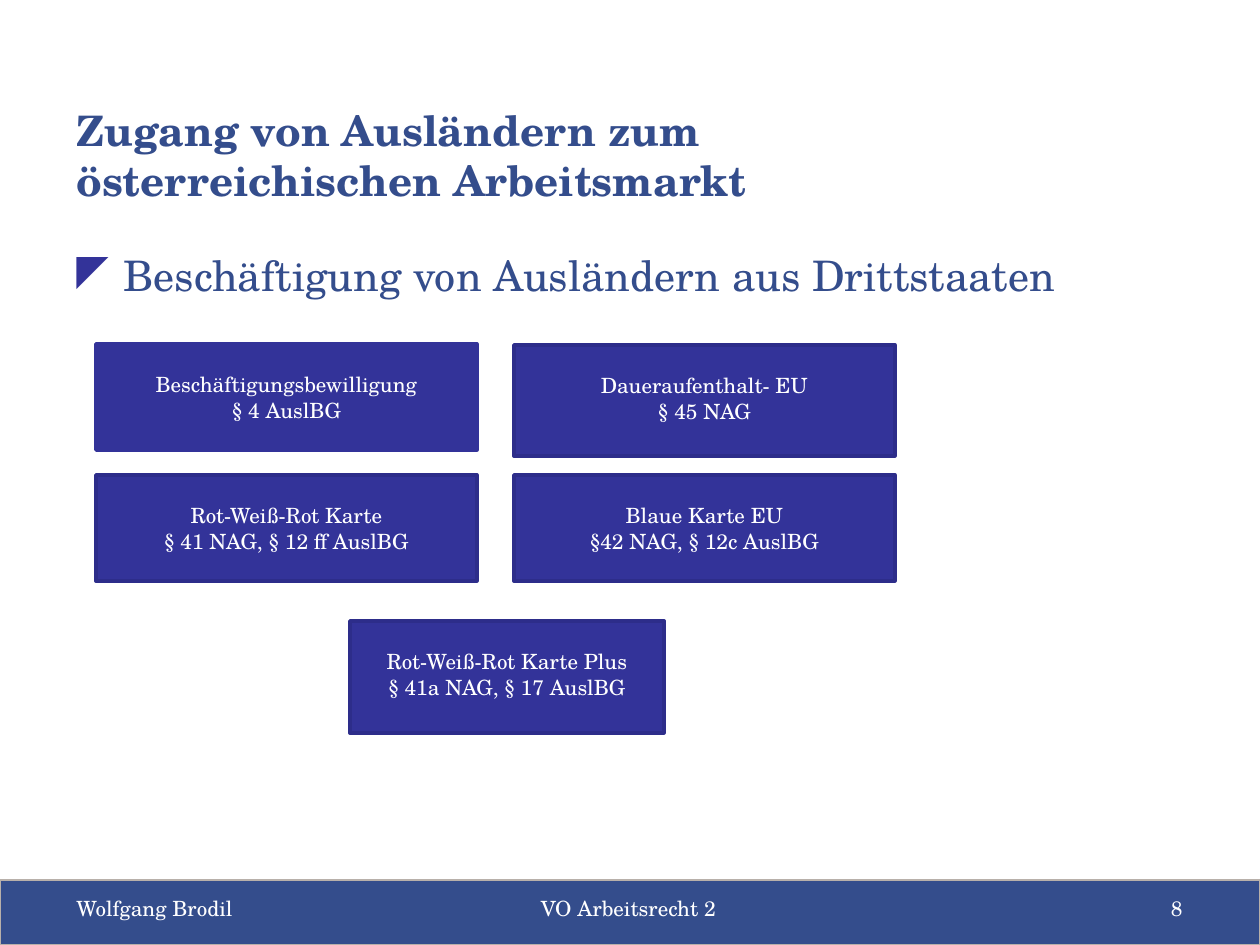
from dataclasses import dataclass

import pptx
import pptx.dml.color
import pptx.enum.shapes
import pptx.enum.text
import pptx.oxml
import pptx.oxml.ns
import pptx.util

EMU_PER_PX = 914400 / 126
FONT = "TeX Gyre Schola"
COLOURS = {
    "navy": "344D8C",
    "indigo": "333399",
    "indigo_edge": "2D2D8A",
    "grey": "B8B0AA",
    "white": "FFFFFF",
}
ALIGN = pptx.enum.text.PP_ALIGN
ANCHOR = pptx.enum.text.MSO_ANCHOR


@dataclass(frozen=True)
class Permit:
    left: int
    top: int
    width: int
    height: int
    name: str
    law: str
    edge: str = "indigo_edge"


LEFT_COLUMN, RIGHT_COLUMN, COLUMN_WIDTH = 96, 514, 381
PERMITS = [
    Permit(LEFT_COLUMN, 344, COLUMN_WIDTH, 106, "Beschäftigungsbewilligung", "§ 4 AuslBG", "indigo"),
    Permit(RIGHT_COLUMN, 345, COLUMN_WIDTH, 111, "Daueraufenthalt- EU", "§ 45 NAG"),
    Permit(LEFT_COLUMN, 475, COLUMN_WIDTH, 106, "Rot-Weiß-Rot Karte", "§ 41 NAG, § 12 ff AuslBG"),
    Permit(RIGHT_COLUMN, 475, COLUMN_WIDTH, 106, "Blaue Karte EU", "§42 NAG, § 12c AuslBG"),
    Permit(350, 621, 314, 112, "Rot-Weiß-Rot Karte Plus", "§ 41a NAG, § 17 AuslBG"),
]


def px(length: int) -> pptx.util.Emu:
    return pptx.util.Emu(round(length * EMU_PER_PX))


def colour(name: str) -> pptx.dml.color.RGBColor:
    return pptx.dml.color.RGBColor.from_string(COLOURS[name])


def add_properties(paragraph, *fragments: str) -> None:
    """Append bullet or tab elements to the paragraph properties."""
    properties = paragraph._p.get_or_add_pPr()
    namespace = pptx.oxml.ns.nsdecls("a")
    for fragment in fragments:
        element = fragment.replace(" ", f" {namespace} ", 1)
        properties.append(pptx.oxml.parse_xml(element))


def add_bullet(paragraph, character: str, fill: str, indent: int) -> None:
    properties = paragraph._p.get_or_add_pPr()
    properties.set("marL", str(px(indent)))
    properties.set("indent", str(-px(indent)))
    add_properties(
        paragraph,
        f'<a:buClr ><a:srgbClr val="{COLOURS[fill]}"/></a:buClr>',
        f'<a:buChar char="{character}"/>',
    )


def add_tabs(paragraph, stops: list[tuple[int, str]]) -> None:
    tabs = "".join(f'<a:tab pos="{px(position)}" algn="{align}"/>' for position, align in stops)
    add_properties(paragraph, f"<a:tabLst >{tabs}</a:tabLst>")


def write_text(shape, text: str, *, size: int, fill: str, bold: bool = False,
               align=ALIGN.LEFT, anchor=ANCHOR.TOP, inset_top: int = 6,
               bullet: str = "", tabs: list[tuple[int, str]] | None = None) -> None:
    """Write one paragraph per line of text."""
    frame = shape.text_frame
    frame.word_wrap = True
    frame.vertical_anchor = anchor
    frame.margin_top = px(inset_top)
    frame.text = text
    for paragraph in frame.paragraphs:
        paragraph.alignment = align
        if bullet:
            add_bullet(paragraph, bullet, "indigo", indent=47)
        if tabs:
            add_tabs(paragraph, tabs)
        for run in paragraph.runs:
            run.font.name = FONT
            run.font.size = pptx.util.Pt(size)
            run.font.bold = bold
            run.font.color.rgb = colour(fill)


def add_rectangle(slide, left: int, top: int, width: int, height: int, *,
                  fill: str, edge: str = "", edge_width: float = 0):
    shape = slide.shapes.add_shape(
        pptx.enum.shapes.MSO_SHAPE.RECTANGLE, px(left), px(top), px(width), px(height))
    shape.shadow.inherit = False
    shape.fill.solid()
    shape.fill.fore_color.rgb = colour(fill)
    if edge:
        shape.line.color.rgb = colour(edge)
        shape.line.width = pptx.util.Pt(edge_width)
    else:
        shape.line.fill.background()
    return shape


def add_permit(slide, permit: Permit) -> None:
    box = add_rectangle(slide, permit.left, permit.top, permit.width, permit.height,
                        fill="indigo", edge=permit.edge, edge_width=2)
    write_text(box, f"{permit.name}\n{permit.law}", size=12, fill="white",
               align=ALIGN.CENTER, inset_top=28)


def add_footer(slide) -> None:
    add_rectangle(slide, 0, 880, 1260, 65, fill="navy", edge="grey", edge_width=0.75)
    strip = add_rectangle(slide, 64, 890, 1142, 38, fill="navy")
    write_text(strip, "Wolfgang Brodil\tVO Arbeitsrecht 2\t8", size=12, fill="white",
               tabs=[(552, "ctr"), (1106, "r")])


def main() -> None:
    presentation = pptx.Presentation()
    presentation.slide_width, presentation.slide_height = px(1260), px(945)
    slide = presentation.slides.add_slide(presentation.slide_layouts[6])

    add_footer(slide)
    title = slide.shapes.add_textbox(px(64), px(76), px(902), px(157))
    write_text(title, "Zugang von Ausländern zum österreichischen Arbeitsmarkt",
               size=24, fill="navy", bold=True, anchor=ANCHOR.MIDDLE)
    heading = slide.shapes.add_textbox(px(64), px(243), px(1082), px(69))
    write_text(heading, "Beschäftigung von Ausländern aus Drittstaaten",
               size=24, fill="navy", bullet="◤")
    for permit in PERMITS:
        add_permit(slide, permit)

    presentation.save("out.pptx")


if __name__ == "__main__":
    main()
